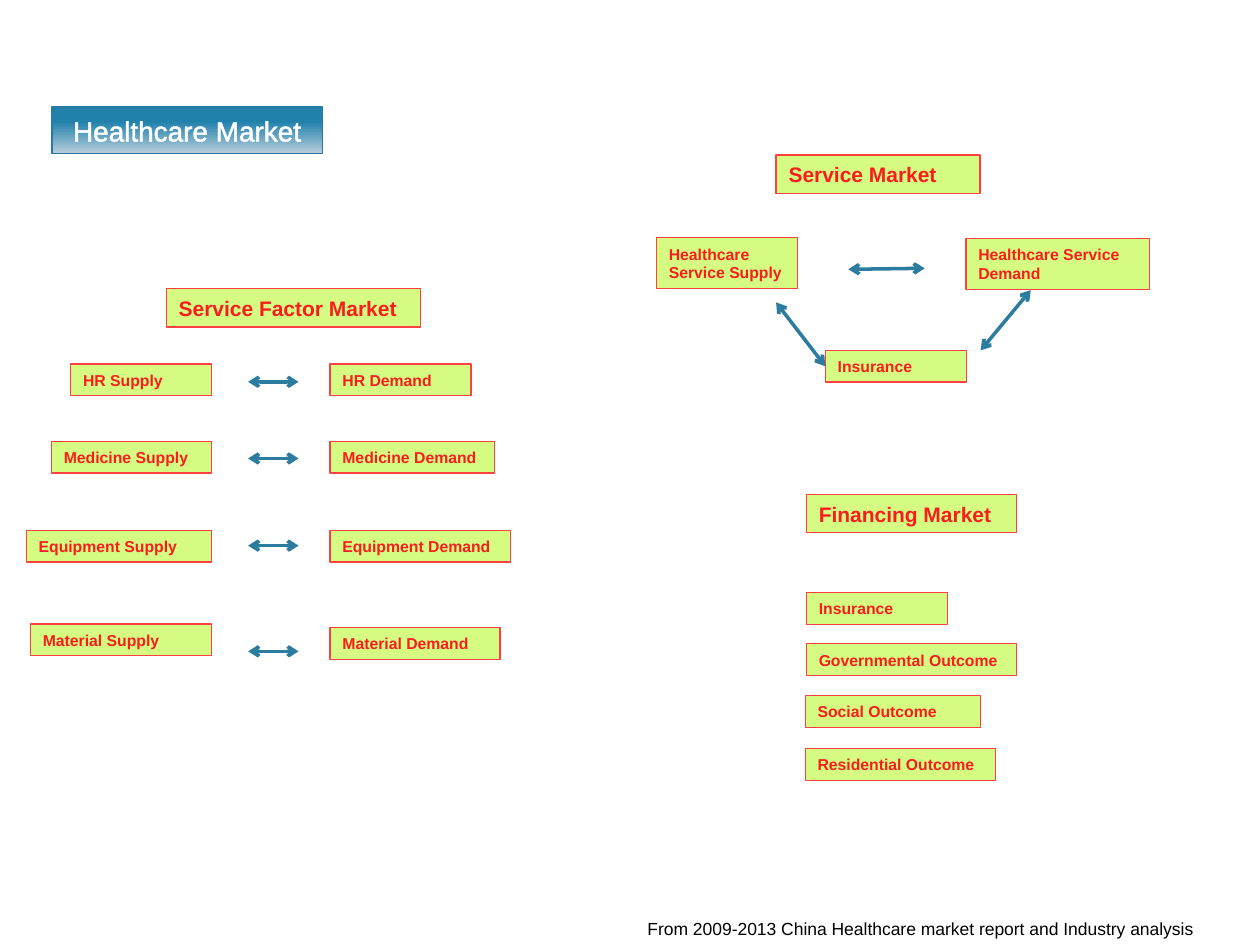
from typing import NamedTuple

from lxml import etree
from pptx import Presentation
from pptx.dml.color import RGBColor
from pptx.enum.shapes import MSO_CONNECTOR, MSO_SHAPE
from pptx.enum.text import MSO_ANCHOR, MSO_AUTO_SIZE, PP_ALIGN
from pptx.oxml.ns import qn
from pptx.util import Pt

RECT = MSO_SHAPE.RECTANGLE
STRAIGHT = MSO_CONNECTOR.STRAIGHT
MIDDLE = MSO_ANCHOR.MIDDLE
LEFT, CENTER = PP_ALIGN.LEFT, PP_ALIGN.CENTER
GROW = MSO_AUTO_SIZE.SHAPE_TO_FIT_TEXT

FONT = "Arial"
COLORS = {
    "box": "D5FB82",
    "border": "FF4040",
    "label": "FA1D1D",
    "arrow": "2C7C9F",
    "banner_top": "2081AB",
    "banner_bottom": "B8CCDC",
    "banner_line": "287A9E",
    "white": "FFFFFF",
    "black": "000000",
}
TITLE_SIZE, ITEM_SIZE = 12, 9
TITLE_H, ITEM_H, TALL_H = 21.8, 18.2, 29
SUPPLY_RIGHT, DEMAND_LEFT = 121, 188.6
ARROW_LEFT, ARROW_RIGHT = 141.8, 170.6


class Box(NamedTuple):
    text: str
    left: float
    top: float
    width: float
    height: float = ITEM_H
    size: float = ITEM_SIZE


class Factor(NamedTuple):
    name: str
    supply_top: float
    supply_width: float
    demand_top: float
    demand_width: float
    arrow_y: float


class Arrow(NamedTuple):
    x1: float
    y1: float
    x2: float
    y2: float


FACTORS = [
    Factor("HR", 208, 80.6, 208, 80.6, 218.2),
    Factor("Medicine", 252.2, 91.6, 252.2, 94, 262),
    Factor("Equipment", 303, 106, 303, 103, 311.8),
    Factor("Material", 356.6, 103.6, 358.7, 97.2, 372.2),
]
BOXES = [
    Box("Service Factor Market", 95, 165, 145.5, TITLE_H, TITLE_SIZE),
    Box("Service Market", 443.5, 88.6, 116.6, TITLE_H, TITLE_SIZE),
    Box("Healthcare Service Supply", 375.1, 135.9, 80.6, TALL_H),
    Box("Healthcare Service Demand", 552, 136.4, 105.1, TALL_H),
    Box("Financing Market", 460.8, 282.6, 120.3, TITLE_H, TITLE_SIZE),
    Box("Insurance", 460.8, 338.6, 80.6),
    Box("Governmental Outcome", 460.8, 367.9, 120.3),
    Box("Social Outcome", 460.1, 397.4, 100.1),
    Box("Residential Outcome", 460.1, 427.8, 108.7),
]
SERVICE_INSURANCE = Box("Insurance", 471.6, 200.2, 80.6)
SUPPLY_TO_INSURANCE = Arrow(443.5, 172.8, 471.6, 209.3)
ARROWS = [
    Arrow(589, 165.8, 560.4, 200.2),
    Arrow(484.8, 153.9, 528.4, 153.3),
]
BANNER = Box("Healthcare Market", 29.5, 61.2, 154.8, 26.6, 16)
SOURCE = Box("From 2009-2013 China Healthcare market report and Industry analysis",
             362.9, 520.7, 355.7, 19.4, 10)


def rgb(name: str) -> RGBColor:
    return RGBColor.from_string(COLORS[name])


def place(box: Box) -> tuple:
    return tuple(Pt(v) for v in (box.left, box.top, box.width, box.height))


def write(sp, box: Box, color: str, bold=False, wrap=True, align=LEFT):
    tf = sp.text_frame
    tf.text = box.text
    tf.word_wrap = wrap
    tf.auto_size = GROW
    tf.vertical_anchor = MIDDLE
    p = tf.paragraphs[0]
    p.alignment = align
    r = p.runs[0]
    r.font.name = FONT
    r.font.size = Pt(box.size)
    r.font.bold = bold
    r.font.color.rgb = rgb(color)
    return r


def add_rect(s, box: Box, line: str, weight: float):
    sp = s.shapes.add_shape(RECT, *place(box))
    sp.shadow.inherit = False
    sp.line.color.rgb = rgb(line)
    sp.line.width = Pt(weight)
    return sp


def add_box(s, box: Box):
    sp = add_rect(s, box, "border", 0.75)
    sp.fill.solid()
    sp.fill.fore_color.rgb = rgb("box")
    write(sp, box, "label", bold=True)
    return sp


def add_arrow(s, arrow: Arrow):
    cx = s.shapes.add_connector(STRAIGHT, *(Pt(v) for v in arrow))
    cx.line.color.rgb = rgb("arrow")
    cx.line.width = Pt(2)
    ln = cx.line._get_or_add_ln()
    for end in ("a:headEnd", "a:tailEnd"):
        etree.SubElement(ln, qn(end), type="arrow")
    etree.SubElement(cx._element.spPr, qn("a:effectLst"))
    return cx


def add_banner(s, box: Box) -> None:
    sp = add_rect(s, box, "banner_line", 1)
    sp.fill.gradient()
    sp.fill.gradient_angle = 270
    stops = (("banner_top", 0.31), ("banner_bottom", 1))
    for stop, (color, position) in zip(sp.fill.gradient_stops, stops):
        stop.color.rgb = rgb(color)
        stop.position = position
    r = write(sp, box, "white", wrap=False, align=CENTER)
    ln = etree.Element(qn("a:ln"), w=str(Pt(1.45)))
    fill = etree.SubElement(ln, qn("a:solidFill"))
    etree.SubElement(fill, qn("a:srgbClr"), val=COLORS["white"])
    r.font._element.insert(0, ln)


def add_factor(s, f: Factor) -> None:
    add_box(s, Box(f"{f.name} Supply", SUPPLY_RIGHT - f.supply_width,
                   f.supply_top, f.supply_width))
    add_box(s, Box(f"{f.name} Demand", DEMAND_LEFT, f.demand_top, f.demand_width))
    add_arrow(s, Arrow(ARROW_LEFT, f.arrow_y, ARROW_RIGHT, f.arrow_y))


def main() -> None:
    prs = Presentation()
    prs.slide_width, prs.slide_height = Pt(720), Pt(540)
    s = prs.slides.add_slide(prs.slide_layouts[6])
    for box in BOXES:
        add_box(s, box)
    for factor in FACTORS:
        add_factor(s, factor)
    for arrow in ARROWS:
        add_arrow(s, arrow)
    insurance = add_box(s, SERVICE_INSURANCE)
    add_arrow(s, SUPPLY_TO_INSURANCE).end_connect(insurance, 1)
    add_banner(s, BANNER)
    write(s.shapes.add_textbox(*place(SOURCE)), SOURCE, "black", wrap=False)
    prs.save("out.pptx")


if __name__ == "__main__":
    main()
